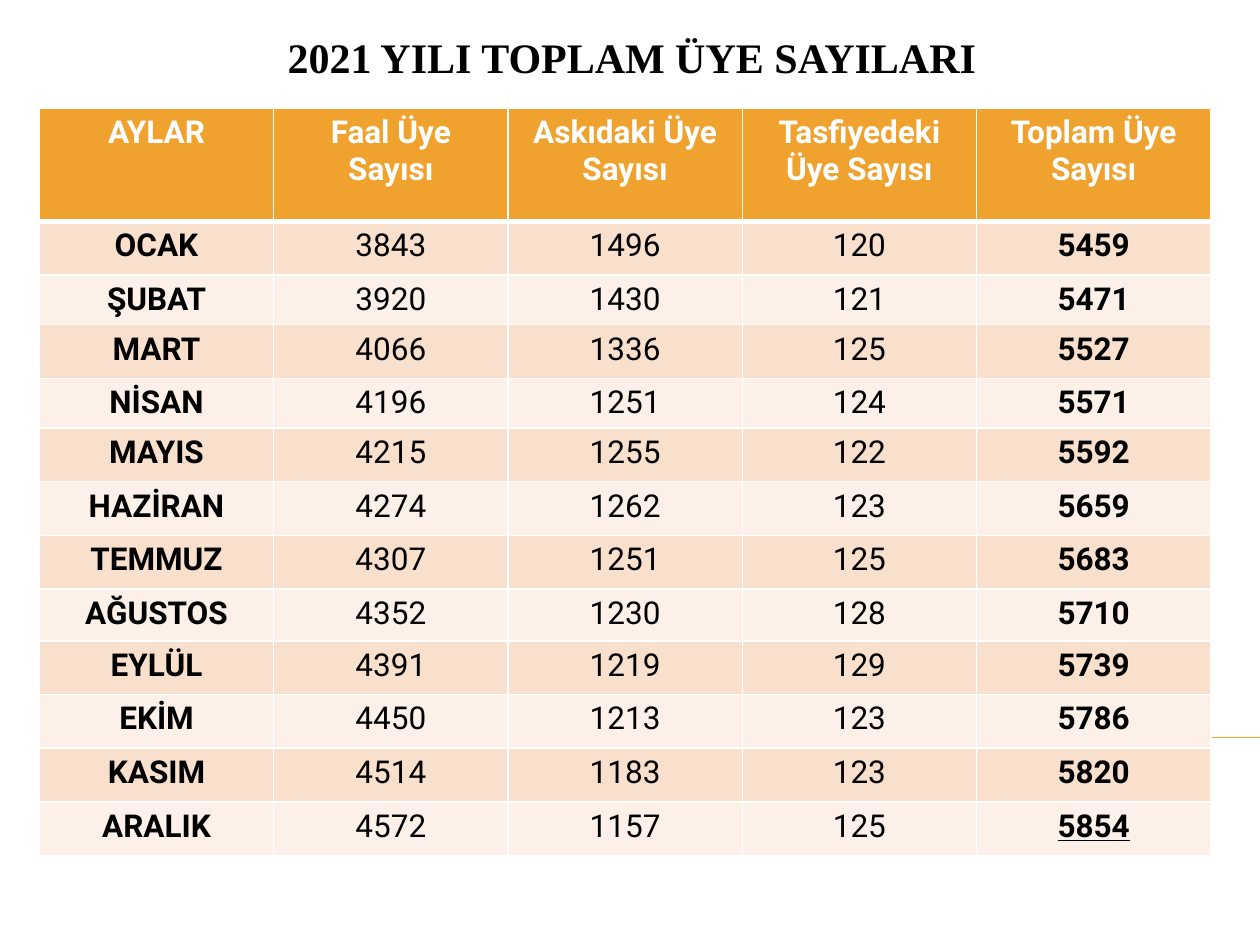
from pptx import Presentation
from pptx.dml.color import RGBColor
from pptx.enum.shapes import MSO_CONNECTOR as Connector
from pptx.enum.text import MSO_ANCHOR as Anchor, MSO_AUTO_SIZE as AutoSize, PP_ALIGN as Align
from pptx.oxml.ns import qn
from pptx.util import Pt
from lxml.etree import SubElement

ORANGE, PEACH, CREAM = "F0A22E", "F9E0CD", "FCF0E8"
WHITE, BLACK = "FFFFFF", "000000"

HEADINGS = ["AYLAR", "Faal Üye Sayısı", "Askıdaki Üye Sayısı",
            "Tasfiyedeki Üye Sayısı", "Toplam Üye Sayısı"]
# Month, active, suspended, in liquidation, total
MONTHS = [
    ("OCAK", 3843, 1496, 120, 5459),
    ("ŞUBAT", 3920, 1430, 121, 5471),
    ("MART", 4066, 1336, 125, 5527),
    ("NİSAN", 4196, 1251, 124, 5571),
    ("MAYIS", 4215, 1255, 122, 5592),
    ("HAZİRAN", 4274, 1262, 123, 5659),
    ("TEMMUZ", 4307, 1251, 125, 5683),
    ("AĞUSTOS", 4352, 1230, 128, 5710),
    ("EYLÜL", 4391, 1219, 129, 5739),
    ("EKİM", 4450, 1213, 123, 5786),
    ("KASIM", 4514, 1183, 123, 5820),
    ("ARALIK", 4572, 1157, 125, 5854),
]
COLUMN_WIDTH = 133.9
HEADER_HEIGHT, MONTH_HEIGHT = 64.5, 30.7
SHORT_ROWS = {2: 28.1, 4: 25.2, 8: 29.5}


def color(hex_code):
    return RGBColor.from_string(hex_code)


def style_text(paragraph, font_name, size, hex_code, bold):
    paragraph.alignment = Align.CENTER
    font = paragraph.font
    font.name, font.size, font.bold = font_name, Pt(size), bold
    font.color.rgb = color(hex_code)


def set_title(slide, text):
    title = slide.shapes.title
    title.left, title.top, title.width, title.height = Pt(28), Pt(16.5), Pt(666), Pt(34)
    frame = title.text_frame
    frame.text = text
    frame.auto_size = AutoSize.NONE
    frame.vertical_anchor = Anchor.BOTTOM
    style_text(frame.paragraphs[0], "Times New Roman", 24, BLACK, True)


def add_rule(slide, left, right, y):
    rule = slide.shapes.add_connector(Connector.STRAIGHT, Pt(left), Pt(y), Pt(right), Pt(y))
    rule.line.color.rgb = color(ORANGE)
    rule.line.width = Pt(0.75)
    SubElement(rule._element.spPr, qn("a:effectLst"))


def set_borders(cell, top, bottom):
    properties = cell._tc.get_or_add_tcPr()
    for side, width in (("L", 1), ("R", 1), ("T", top), ("B", bottom)):
        border = SubElement(properties, qn(f"a:ln{side}"), w=str(Pt(width)))
        fill = SubElement(border, qn("a:solidFill"))
        SubElement(fill, qn("a:srgbClr"), val=WHITE)


def fill_cell(cell, text, background, text_color, bold, top=1, bottom=1):
    set_borders(cell, top, bottom)
    cell.fill.solid()
    cell.fill.fore_color.rgb = color(background)
    cell.text = str(text)
    style_text(cell.text_frame.paragraphs[0], "Roboto", 18, text_color, bold)


def add_member_table(slide):
    row_count, column_count = len(MONTHS) + 1, len(HEADINGS)
    table = slide.shapes.add_table(
        row_count, column_count, Pt(22.5), Pt(62), Pt(COLUMN_WIDTH * column_count),
        Pt(HEADER_HEIGHT + MONTH_HEIGHT * len(MONTHS))).table
    for column in table.columns:
        column.width = Pt(COLUMN_WIDTH)

    # Header row, with a thick border below
    table.rows[0].height = Pt(HEADER_HEIGHT)
    for col, heading in enumerate(HEADINGS):
        fill_cell(table.cell(0, col), heading, ORANGE, WHITE, True, bottom=3)

    # Month rows in alternating tints, month and total in bold
    for row, month in enumerate(MONTHS, start=1):
        table.rows[row].height = Pt(SHORT_ROWS.get(row, MONTH_HEIGHT))
        tint = PEACH if row % 2 else CREAM
        for col, value in enumerate(month):
            fill_cell(table.cell(row, col), value, tint, BLACK,
                      bold=col in (0, column_count - 1), top=3 if row == 1 else 1)

    # Year-end total
    year_end = table.cell(row_count - 1, column_count - 1)
    year_end.text_frame.paragraphs[0].font.underline = True


def main():
    deck = Presentation()
    deck.slide_width, deck.slide_height = Pt(720), Pt(540)
    slide = deck.slides.add_slide(deck.slide_layouts[5])
    set_title(slide, "2021 YILI TOPLAM ÜYE SAYILARI")
    add_rule(slide, 40, 720, 421.5)
    add_member_table(slide)
    deck.save("out.pptx")


if __name__ == "__main__":
    main()
